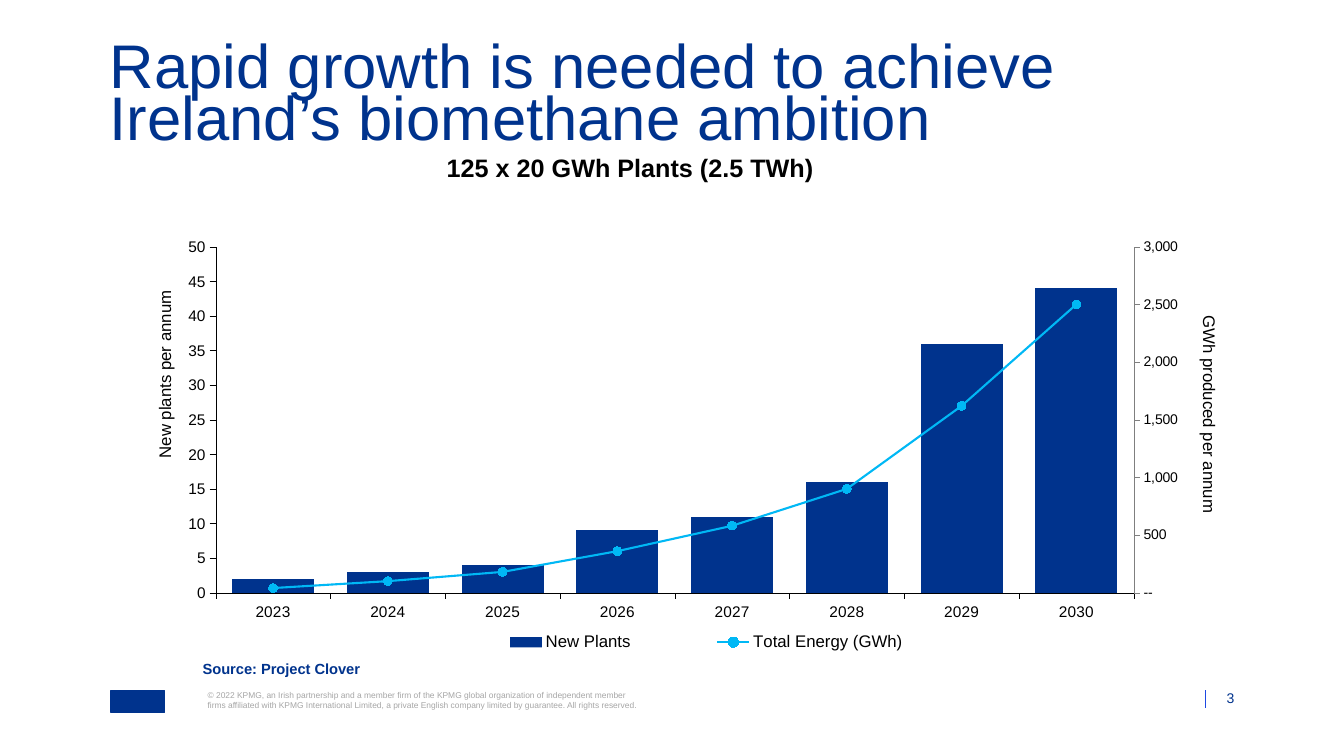
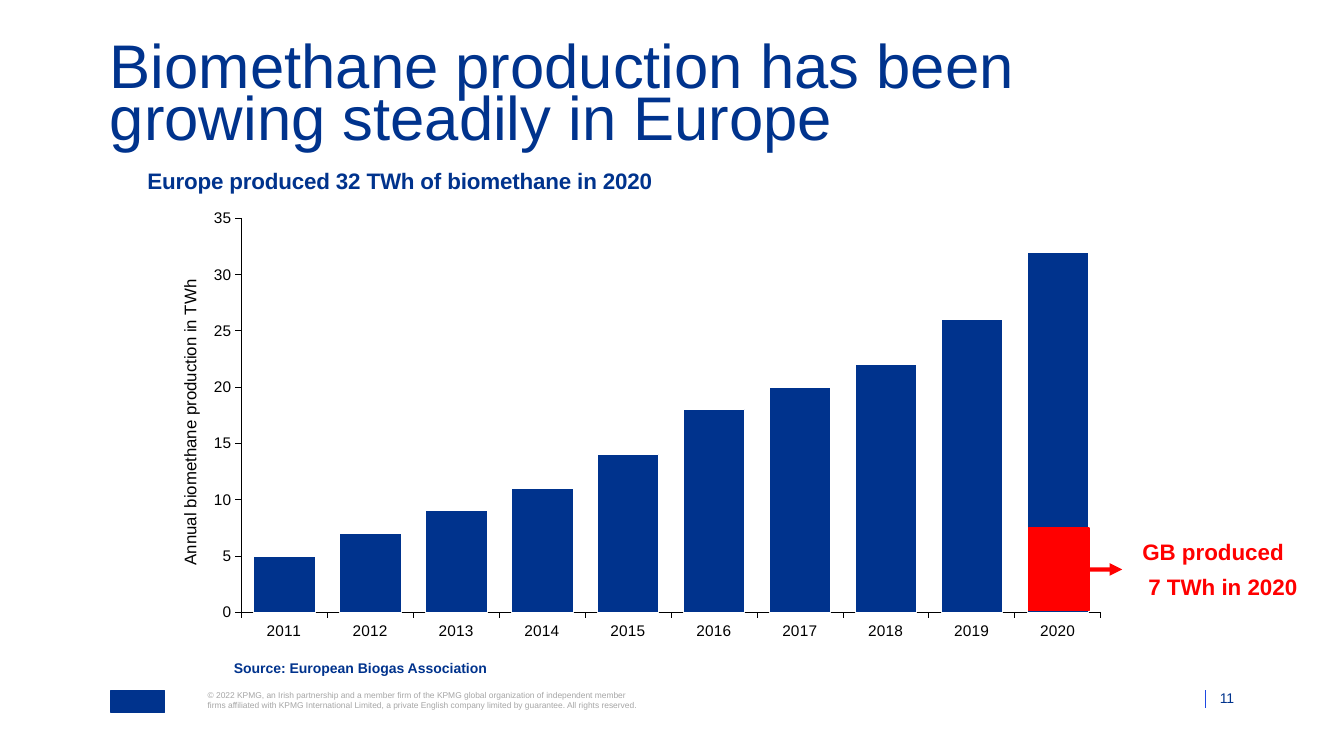
from dataclasses import dataclass, field
from typing import Any, NamedTuple

from pptx import Presentation, util as u
from pptx.chart import axis as ax, data
from pptx.dml import color
from pptx.enum import chart as ec, shapes, text
from pptx.oxml import ns, parse_xml

WIDE, HIGH = u.Inches(13.33), u.Inches(7.5)
FONT = "Arial"
HUES = {"navy": "00338D", "sky": "00B8F5", "blue": "1E49E2", "red": "FF0000",
        "grey": "A6A6A6", "dim": "7F7F7F", "black": "000000", "white": "FFFFFF"}
LEGAL = ("© 2022 KPMG, an Irish partnership and a member firm of the KPMG global "
         "organization of independent member firms affiliated with KPMG International "
         "Limited, a private English company limited by guarantee. All rights reserved.")


class Box(NamedTuple):
    """Left, top, width and height in percent of the slide."""
    x: float
    y: float
    w: float
    h: float

    def emu(self) -> list[int]:
        """Return the box in slide units."""
        return [round(v * side / 100) for v, side in zip(self, (WIDE, HIGH, WIDE, HIGH))]


class Part(NamedTuple):
    """Place of a chart part in shares of the chart; no size for titles."""
    x: float
    y: float
    w: float = 0
    h: float = 0


@dataclass
class Note:
    """A text box with one style."""
    box: Box
    lines: list[str]
    size: float
    hue: str = "navy"
    bold: bool = False
    pad: float = 0
    form: dict[str, Any] = field(default_factory=dict)
    frame: dict[str, Any] = field(default_factory=dict)
    dents: tuple[float, ...] = (0, 0)


@dataclass
class Scale:
    """A value axis with its title."""
    top: float
    step: float
    name: str
    spot: Part
    turn: int = -90
    size: float = 11
    hue: str = "black"
    code: str = "General"


@dataclass
class Graph:
    """A column chart."""
    box: Box
    kind: Any
    years: range
    sets: dict[str, list[int]]
    plot: Part
    scale: Scale
    form: dict[str, Any]


@dataclass
class Page:
    """What changes from slide to slide."""
    title: str
    wide: float
    number: int
    graph: Graph
    notes: list[Note]


AFTER = {"space_after": u.Pt(6)}
PAGES = [
    Page("Rapid growth is needed to achieve Ireland’s biomethane ambition", 88.15, 3,
         Graph(Box(8.78, 22.8, 82.6, 66.13), ec.XL_CHART_TYPE.COLUMN_STACKED,
               range(2023, 2031),
               {"New Plants": [2, 3, 4, 9, 11, 16, 36, 44],
                "Total Energy (GWh)": [40, 100, 180, 360, 580, 900, 1620, 2500]},
               Part(0.088, 0.149, 0.827, 0.692),
               Scale(50, 5, "New plants per annum", Part(0.03, 0.23)),
               {"gap_width": 40, "overlap": 100, "vary_by_categories": False}),
         [Note(Box(32.78, 19.33, 34.43, 3.33), ["125 x 20 GWh Plants (2.5 TWh)"], 18,
               "black", True, 0.06, AFTER),
          Note(Box(15.08, 87.33, 60.62, 4.27), ["Source: Project Clover"], 10.5,
               bold=True, form=AFTER)]),
    Page("Biomethane production has been growing steadily in Europe", 83.65, 11,
         Graph(Box(8.18, 18, 82.82, 71.47), ec.XL_CHART_TYPE.COLUMN_CLUSTERED,
               range(2011, 2021),
               {"Series 1": [5, 7, 9, 11, 14, 18, 20, 22, 26, 32]},
               Part(0.118, 0.152, 0.772, 0.729),
               Scale(35, 5, "Annual biomethane production in TWh", Part(0.06, 0.26)),
               {"gap_width": 40, "vary_by_categories": False}),
         [Note(Box(17.4, 87.2, 52.29, 4.53), ["Source: European Biogas Association"], 10,
               bold=True, form=AFTER),
          Note(Box(85, 71.2, 12.15, 13.73), ["GB produced", "7 TWh in 2020"], 16,
               "red", True, form=AFTER, dents=(0, 0.06))]),
]
ENERGY = Scale(3000, 500, "GWh produced per annum", Part(0.97, 0.28), 90, 10, "dim",
               '#,##0;-#,##0;"--"')


def give(thing: Any, form: dict[str, Any]) -> None:
    """Set every attribute in a dict."""
    for key, value in form.items():
        setattr(thing, key, value)


def rgb(hue: str) -> color.RGBColor:
    """Look up a colour."""
    return color.RGBColor.from_string(HUES[hue])


def ink(font: Any, size: float, hue: str = "black", bold: bool = False) -> None:
    """Style a font."""
    give(font, {"name": FONT, "size": u.Pt(size), "bold": bold})
    font.color.rgb = rgb(hue)


def stroke(line: Any, hue: str, width: float) -> None:
    """Style a line."""
    line.color.rgb = rgb(hue)
    line.width = u.Pt(width)


def xml(tag: str, body: str) -> Any:
    """Make a chart element."""
    return parse_xml(f"<c:{tag} {ns.nsdecls('c')}>{body}</c:{tag}>")


def write(slide: Any, note: Note) -> None:
    """Draw a text box."""
    frame = slide.shapes.add_textbox(*note.box.emu()).text_frame
    sides = ("left", "top", "right", "bottom")
    give(frame, {f"margin_{side}": u.Inches(note.pad) for side in sides})
    give(frame, {"word_wrap": True, **note.frame})
    for i, (line, dent) in enumerate(zip(note.lines, note.dents)):
        para = frame.add_paragraph() if i else frame.paragraphs[0]
        if dent:
            para._p.get_or_add_pPr().set("marL", str(u.Inches(dent)))
        give(para, note.form)
        run = para.add_run()
        run.text = line
        ink(run.font, note.size, note.hue, note.bold)


def block(slide: Any, box: Box, hue: str) -> Any:
    """Draw a plain rectangle."""
    shape = slide.shapes.add_shape(shapes.MSO_SHAPE.RECTANGLE, *box.emu())
    shape.shadow.inherit = False
    shape.fill.solid()
    shape.fill.fore_color.rgb = rgb(hue)
    stroke(shape.line, hue, 1)
    return shape


def rule(slide: Any, box: Box, hue: str, width: float) -> Any:
    """Draw a straight line across a box."""
    x, y, w, h = box.emu()
    line = slide.shapes.add_connector(shapes.MSO_CONNECTOR.STRAIGHT, x, y, x + w, y + h)
    stroke(line.line, hue, width)
    line._element.spPr.append(parse_xml(f"<a:effectLst {ns.nsdecls('a')}/>"))
    return line


def place(node: Any, part: Part, inner: bool = False) -> None:
    """Give a chart part a fixed place."""
    for old in node.findall(ns.qn("c:layout")):
        node.remove(old)
    body = '<c:layoutTarget val="inner"/>' if inner else ""
    body += '<c:xMode val="edge"/><c:yMode val="edge"/>'
    body += "".join(f'<c:{k} val="{v}"/>' for k, v in part._asdict().items() if v)
    lay = xml("layout", f"<c:manualLayout>{body}</c:manualLayout>")
    mark = node.find(ns.qn("c:overlay"))
    if mark is None:
        node.insert(0, lay)
    else:
        mark.addprevious(lay)


def head(title: Any, words: str, part: Part, size: float, hue: str = "black",
         bold: bool = False) -> None:
    """Write and place a chart or axis title."""
    para = title.text_frame.paragraphs[0]
    run = para.add_run()
    run.text = words
    ink(run.font, size, hue, bold)
    place(title._element, part)


def trim(axis: Any, size: float = 11, hue: str = "black") -> None:
    """Style an axis."""
    give(axis, {"has_major_gridlines": False, "major_tick_mark": ec.XL_TICK_MARK.OUTSIDE,
                "minor_tick_mark": ec.XL_TICK_MARK.NONE})
    stroke(axis.format.line, hue, 0.25)
    ink(axis.tick_labels.font, size)


def gauge(axis: Any, scale: Scale) -> None:
    """Set up a value axis."""
    trim(axis, scale.size, scale.hue)
    give(axis, {"minimum_scale": 0, "maximum_scale": scale.top, "major_unit": scale.step,
                "has_title": True})
    give(axis.tick_labels, {"number_format": scale.code, "number_format_is_linked": False})
    head(axis.axis_title, scale.name, scale.spot, 12)
    body = axis.axis_title.text_frame._txBody.bodyPr
    body.set("rot", str(scale.turn * 60000))
    body.set("vert", "horz")


def chart(slide: Any, graph: Graph) -> Any:
    """Draw a column chart."""
    feed = data.CategoryChartData()
    feed.categories = [str(year) for year in graph.years]
    for name, values in graph.sets.items():
        feed.add_series(name, values)
    made = slide.shapes.add_chart(graph.kind, *graph.box.emu(), feed).chart
    give(made, {"has_legend": False, "has_title": False})
    ink(made.font, 8)
    give(made.plots[0], graph.form)
    bars = made.plots[0].series[0]
    bars.format.fill.solid()
    bars.format.fill.fore_color.rgb = rgb("navy")
    trim(made.category_axis)
    made.category_axis.tick_label_position = ec.XL_TICK_LABEL_POSITION.LOW
    gauge(made.value_axis, graph.scale)
    place(made._chartSpace.chart.plotArea, graph.plot, True)
    return made


def curve(made: Any) -> None:
    """Turn the second series into a line on a right axis."""
    area = made._chartSpace.chart.plotArea
    bars = area.find(ns.qn("c:barChart"))
    ser = bars.findall(ns.qn("c:ser"))[1]
    for flag in ser.findall(ns.qn("c:invertIfNegative")):
        ser.remove(flag)
    line = xml("lineChart", '<c:grouping val="standard"/><c:varyColors val="0"/>'
               '<c:marker val="1"/><c:axId val="501"/><c:axId val="502"/>')
    line.insert(2, ser)
    bars.addnext(line)
    base = ('<c:axId val="{}"/><c:scaling><c:orientation val="minMax"/></c:scaling>'
            '<c:delete val="{}"/><c:axPos val="{}"/><c:crossAx val="{}"/>'
            '<c:crosses val="{}"/>')
    side = xml("valAx", base.format(502, 0, "r", 501, "max"))
    last = area.find(ns.qn("c:valAx"))
    last.addnext(side)
    side.addnext(xml("catAx", base.format(501, 1, "b", 502, "autoZero")))
    gauge(ax.ValueAxis(side), ENERGY)
    trend = made.plots[1].series[0]
    trend.smooth = False
    stroke(trend.format.line, "sky", 1.5)
    give(trend.marker, {"style": ec.XL_MARKER_STYLE.CIRCLE, "size": 6})
    trend.marker.format.fill.solid()
    trend.marker.format.fill.fore_color.rgb = rgb("sky")
    stroke(trend.marker.format.line, "sky", 0.75)
    made.has_legend = True
    give(made.legend, {"position": ec.XL_LEGEND_POSITION.BOTTOM, "include_in_layout": False})
    ink(made.legend.font, 12)
    place(made.legend._element, Part(0.28, 0.91, 0.5, 0.06))


def callout(slide: Any) -> None:
    """Mark the British share of the last column."""
    share = block(slide, Box(76.52, 69.87, 4.5, 10.93), "red")
    arrow = rule(slide, Box(81.02, 75.33, 2.48, 0), "red", 3)
    arrow.begin_connect(share, 3)
    arrow.line._get_or_add_ln().append(
        parse_xml(f'<a:tailEnd {ns.nsdecls("a")} type="triangle"/>'))


def base(deck: Any, page: Page) -> Any:
    """Add a slide with its title and footer."""
    slide = deck.slides.add_slide(deck.slide_layouts[6])
    block(slide, Box(8.25, 91.33, 3.98, 2.93), "navy")
    rule(slide, Box(89.65, 91.33, 0, 2.27), "blue", 0.5)
    for note in (
            Note(Box(89.8, 91.33, 2.03, 2.13), [str(page.number)], 10,
                 form={"alignment": text.PP_ALIGN.RIGHT},
                 frame={"vertical_anchor": text.MSO_ANCHOR.BOTTOM}),
            Note(Box(15.45, 91.33, 32.56, 2.67), [LEGAL], 6, "grey"),
            Note(Box(8.18, 6.27, page.wide, 7.73), [page.title], 44,
                 form={"line_spacing": 0.7})):
        write(slide, note)
    return slide


def main() -> None:
    """Build the deck."""
    deck = Presentation()
    give(deck, {"slide_width": WIDE, "slide_height": HIGH})
    for page in PAGES:
        slide = base(deck, page)
        made = chart(slide, page.graph)
        if len(page.graph.sets) > 1:
            curve(made)
        else:
            stroke(made.plots[0].series[0].format.line, "white", 0.25)
            made.has_title = True
            head(made.chart_title, "Europe produced 32 TWh of biomethane in 2020",
                 Part(0.03, 0.05), 16, "navy", True)
            callout(slide)
        for note in page.notes:
            write(slide, note)
    deck.save("out.pptx")


if __name__ == "__main__":
    main()
